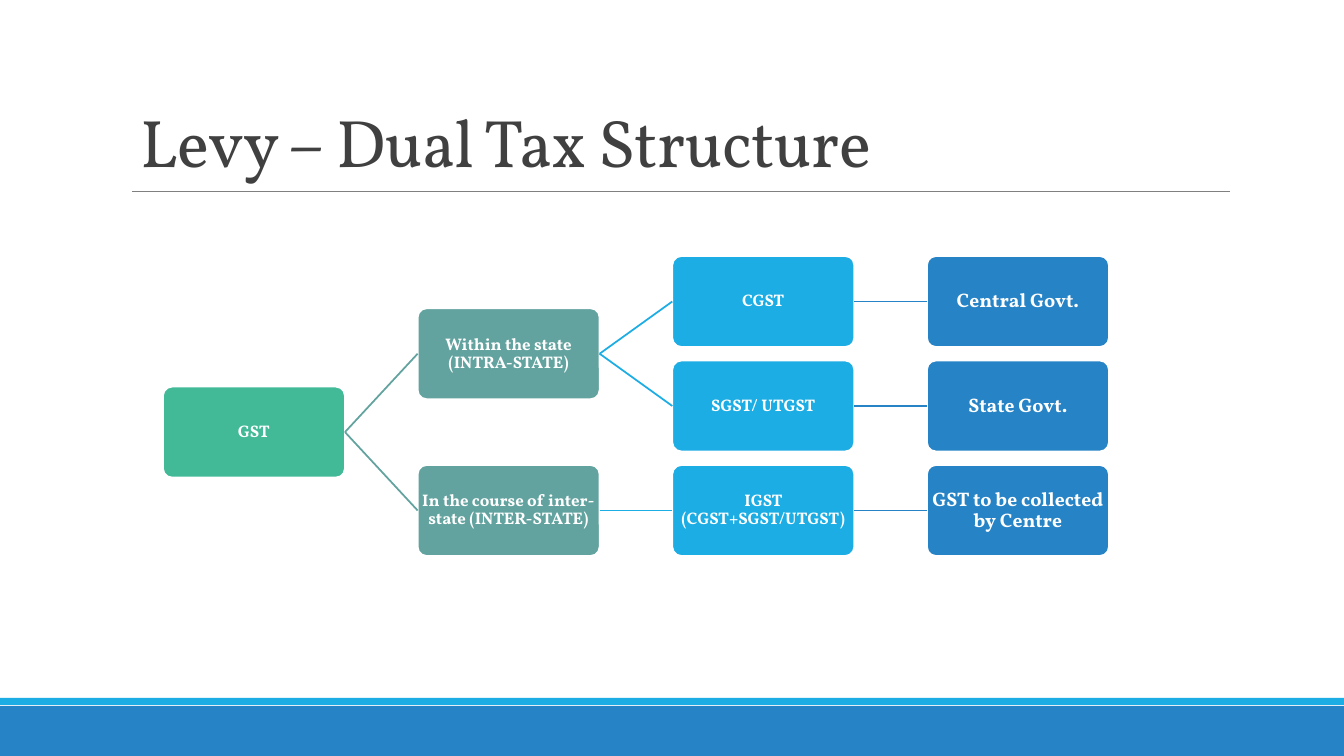
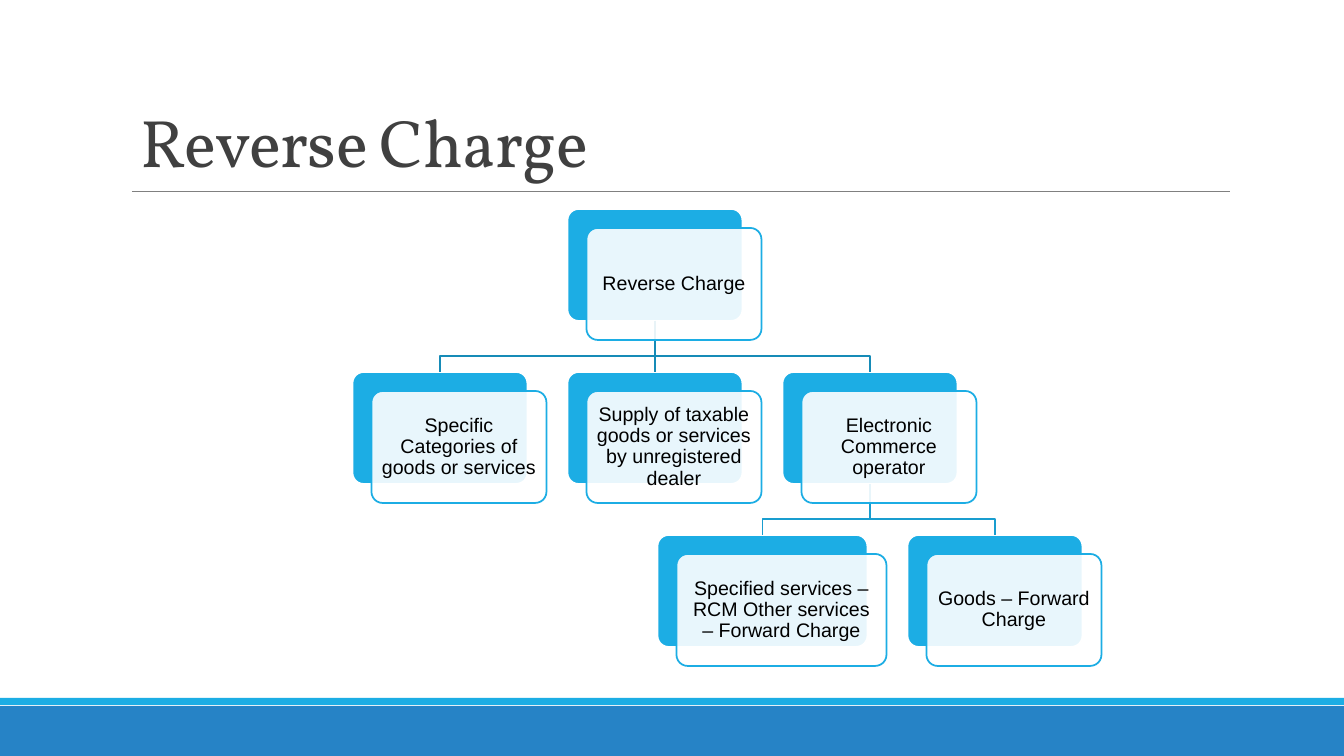
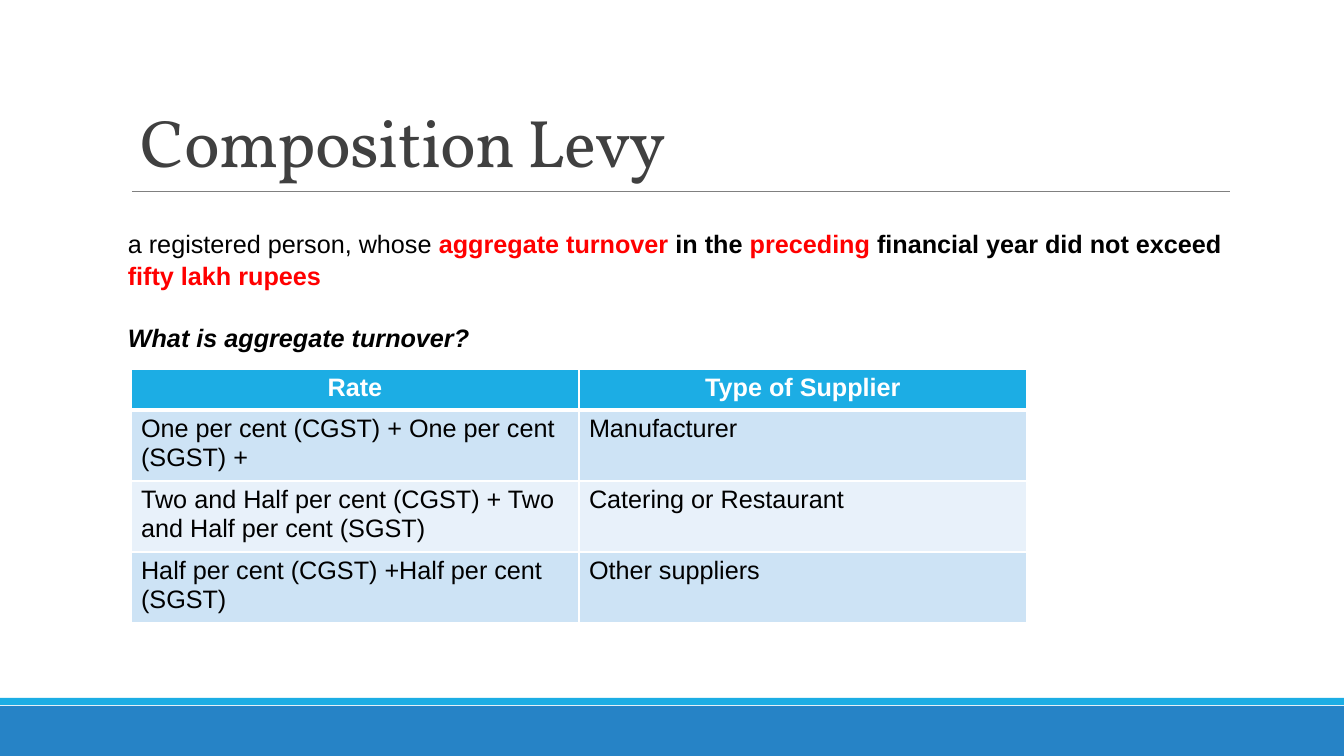
from collections import namedtuple
from itertools import count

from lxml import etree
from pptx import Presentation
from pptx.dml.color import RGBColor
from pptx.enum.shapes import MSO_CONNECTOR, MSO_SHAPE
from pptx.enum.text import MSO_ANCHOR, PP_ALIGN
from pptx.oxml.ns import qn
from pptx.util import Emu, Pt

RECTANGLE = MSO_SHAPE.RECTANGLE
ROUNDED = MSO_SHAPE.ROUNDED_RECTANGLE
STRAIGHT = MSO_CONNECTOR.STRAIGHT
CENTER = PP_ALIGN.CENTER
LEFT = PP_ALIGN.LEFT
MIDDLE = MSO_ANCHOR.MIDDLE
BOTTOM = MSO_ANCHOR.BOTTOM
TOP_SIDE, LEFT_SIDE, BOTTOM_SIDE, RIGHT_SIDE = range(4)

EMU_PER_PX = 914400 / 100.8
SLIDE_WIDTH, SLIDE_HEIGHT = 1344, 756
HEADING_FONT, BODY_FONT = "Vollkorn", "Arial"
COLOURS = {
    "white": "FFFFFF", "black": "000000", "red": "FF0000",
    "title": "404040", "rule": "808080",
    "sky": "1CADE4", "blue": "2683C6", "green": "42BA97", "teal": "62A39F",
    "upper link": "168BB7", "lower link": "199DCF",
    "band dark": "CDE3F5", "band light": "E8F1FA",
}

Node = namedtuple("Node", "text children", defaults=((),))
Card = namedtuple("Card", "text children width", defaults=((), 175))

TAX_TREE = Node("GST", (
    Node("Within the state (INTRA-STATE)", (
        Node("CGST", (Node("Central Govt."),)),
        Node("SGST/ UTGST", (Node("State Govt."),)),
    )),
    Node("In the course of inter-state (INTER-STATE)", (
        Node("IGST (CGST+SGST/UTGST)", (Node("GST to be collected by Centre"),)),
    )),
))
TAX_LEVELS = (("green", 12), ("teal", 12), ("sky", 12), ("blue", 14))

CHARGE_TREE = Card("Reverse Charge", (
    Card("Specific Categories of goods or services"),
    Card("Supply of taxable goods or services by unregistered dealer"),
    Card("Electronic Commerce operator", (
        Card("Specified services – RCM Other services – Forward Charge", width=210),
        Card("Goods – Forward Charge"),
    )),
))
CHARGE_LINKS = ("upper link", "lower link")

ELIGIBILITY = (
    ("a registered person, whose ", "black", False),
    ("aggregate turnover ", "red", True),
    ("in the ", "black", True),
    ("preceding", "red", True),
    (" financial year did not exceed ", "black", True),
    ("fifty lakh rupees", "red", True),
)
RATES = (
    ("Rate", "Type of Supplier"),
    ("One per cent (CGST) + One per cent (SGST) +", "Manufacturer"),
    ("Two and Half per cent (CGST) + Two and Half per cent (SGST)",
     "Catering or Restaurant"),
    ("Half per cent (CGST) +Half per cent (SGST)", "Other suppliers"),
)


def px(length):
    return Emu(round(length * EMU_PER_PX))


def colour(name):
    return RGBColor.from_string(COLOURS[name])


def add_run(paragraph, text, size, colour_name, font=BODY_FONT, bold=False, italic=False):
    run = paragraph.add_run()
    run.text = text
    run.font.name = font
    run.font.size = Pt(size)
    run.font.bold = bold
    run.font.italic = italic
    run.font.color.rgb = colour(colour_name)
    return run


def add_box(slide, kind, box, fill, line=None):
    shape = slide.shapes.add_shape(kind, *map(px, box))
    shape.shadow.inherit = False
    shape.fill.solid()
    shape.fill.fore_color.rgb = colour(fill)
    if line:
        shape.line.color.rgb = colour(line)
        shape.line.width = Pt(1.25)
    else:
        shape.line.fill.background()
    if kind == ROUNDED:
        shape.adjustments[0] = 0.1
    return shape


def add_label(shape, text, inset, **style):
    frame = shape.text_frame
    frame.word_wrap = True
    frame.vertical_anchor = MIDDLE
    frame.margin_left = frame.margin_right = px(inset)
    frame.margin_top = frame.margin_bottom = px(inset)
    paragraph = frame.paragraphs[0]
    paragraph.alignment = CENTER
    paragraph.line_spacing = 0.9
    add_run(paragraph, text, **style)


def add_line(slide, colour_name, width, start=(0, 0), end=(0, 0)):
    connector = slide.shapes.add_connector(STRAIGHT, *map(px, start + end))
    connector.line.color.rgb = colour(colour_name)
    connector.line.width = Pt(width)
    etree.SubElement(connector._element.spPr, qn("a:effectLst"))
    return connector


def join(slide, first, first_side, second, second_side, colour_name):
    connector = add_line(slide, colour_name, 1.25)
    connector.begin_connect(first, first_side)
    connector.end_connect(second, second_side)


def add_text_box(slide, box):
    frame = slide.shapes.add_textbox(*map(px, box)).text_frame
    frame.word_wrap = True
    return frame


def add_titled_slide(presentation, title):
    slide = presentation.slides.add_slide(presentation.slide_layouts[6])
    add_box(slide, RECTANGLE, (0, 706, SLIDE_WIDTH, 50), "blue")
    add_box(slide, RECTANGLE, (0, 698, SLIDE_WIDTH, 7), "sky")
    add_line(slide, "rule", 0.5, (132, 191), (1230, 191))
    frame = add_text_box(slide, (131, 26, 1109, 160))
    frame.vertical_anchor = BOTTOM
    paragraph = frame.paragraphs[0]
    paragraph.line_spacing = 0.85
    run = add_run(paragraph, title, 48, "title", HEADING_FONT)
    run.font._element.set("spc", "-50")
    return slide


def add_tax_tree(slide, root, box):
    left, top, width, height = box
    node_width, node_height = 182, 91
    column_step = (width - node_width) / (len(TAX_LEVELS) - 1)
    row_step = (height - node_height) / 2
    leaf_rows = count()

    def place(node, level):
        placed = [place(child, level + 1) for child in node.children]
        rows = [row for _, row in placed] or [next(leaf_rows)]
        row = sum(rows) / len(rows)
        fill, size = TAX_LEVELS[level]
        corner = (left + level * column_step, top + row * row_step)
        shape = add_box(slide, ROUNDED, corner + (node_width, node_height), fill, "white")
        add_label(shape, node.text, 1, size=size, colour_name="white",
                  font=HEADING_FONT, bold=True)
        for child, _ in placed:
            join(slide, shape, RIGHT_SIDE, child, LEFT_SIDE, TAX_LEVELS[level + 1][0])
        return shape, row

    place(root, 0)


def add_elbow(slide, start, bend_y, end, colour_name):
    points = [start, (start[0], bend_y), (end[0], bend_y), end]
    points = [(px(x), px(y)) for x, y in points]
    builder = slide.shapes.build_freeform(*points[0])
    builder.add_line_segments(points[1:], close=False)
    elbow = builder.convert_to_shape()
    elbow.shadow.inherit = False
    elbow.fill.background()
    elbow.line.color.rgb = colour(colour_name)
    elbow.line.width = Pt(1.25)


def add_charge_tree(slide, root, center, top):
    card_height, offset = 112, 19
    column_gap, level_gap, bend = 40, 51, 35
    backs, links = [], []

    def place(card, middle, y, level):
        box = (middle - card.width / 2, y, card.width, card_height)
        back = add_box(slide, ROUNDED, box, "sky", "white")
        backs.append((card, box))
        row_width = sum(child.width + column_gap for child in card.children) - column_gap
        x = middle - row_width / 2
        for child in card.children:
            child_middle = x + child.width / 2
            child_y = y + card_height + level_gap
            child_back = place(child, child_middle, child_y, level + 1)
            links.append((back, (middle, y + card_height),
                          child_back, (child_middle, child_y), CHARGE_LINKS[level]))
            x += child.width + column_gap
        return back

    place(root, center, top, 0)
    for back, start, child_back, end, link_colour in links:
        if start[0] == end[0]:
            join(slide, back, BOTTOM_SIDE, child_back, TOP_SIDE, link_colour)
        else:
            add_elbow(slide, start, start[1] + bend, end, link_colour)
    for card, (x, y, width, height) in backs:
        front = add_box(slide, ROUNDED, (x + offset, y + offset, width, height),
                        "white", "sky")
        fill_colour = front._element.spPr.find(qn("a:solidFill"))[0]
        etree.SubElement(fill_colour, qn("a:alpha"), val="90000")
        add_label(front, card.text, 6, size=14, colour_name="black")


def add_eligibility(slide, box):
    frame = add_text_box(slide, box)
    statement = frame.paragraphs[0]
    for text, colour_name, bold in ELIGIBILITY:
        add_run(statement, text, 18, colour_name, bold=bold)
    question = frame.add_paragraph()
    question.space_before = Pt(22)
    add_run(question, "What is aggregate turnover?", 18, "black", bold=True, italic=True)
    for paragraph in frame.paragraphs:
        paragraph.line_spacing = 1.05


def set_borders(cell, bottom_width):
    properties = cell._tc.get_or_add_tcPr()
    sides = (("lnL", 1), ("lnR", 1), ("lnT", 1), ("lnB", bottom_width))
    for position, (side, width) in enumerate(sides):
        line = etree.Element(qn("a:" + side), w=str(Pt(width)))
        fill = etree.SubElement(line, qn("a:solidFill"))
        etree.SubElement(fill, qn("a:srgbClr"), val=COLOURS["white"])
        properties.insert(position, line)


def add_rate_table(slide, box):
    header_height, row_height = 41, 71
    table = slide.shapes.add_table(len(RATES), len(RATES[0]), *map(px, box)).table
    table.horz_banding = False
    for row_index, texts in enumerate(RATES):
        header = row_index == 0
        fill = "sky" if header else ("band light", "band dark")[row_index % 2]
        table.rows[row_index].height = px(header_height if header else row_height)
        for column_index, text in enumerate(texts):
            cell = table.cell(row_index, column_index)
            cell.fill.solid()
            cell.fill.fore_color.rgb = colour(fill)
            set_borders(cell, 3 if header else 1)
            paragraph = cell.text_frame.paragraphs[0]
            paragraph.alignment = CENTER if header else LEFT
            add_run(paragraph, text, 18, "white" if header else "black", bold=header)


def main():
    presentation = Presentation()
    presentation.slide_width = px(SLIDE_WIDTH)
    presentation.slide_height = px(SLIDE_HEIGHT)

    slide = add_titled_slide(presentation, "Levy – Dual Tax Structure")
    add_tax_tree(slide, TAX_TREE, (163, 256, 946, 300))

    slide = add_titled_slide(presentation, "Reverse Charge")
    add_charge_tree(slide, CHARGE_TREE, 655, 209)

    slide = add_titled_slide(presentation, "Composition Levy")
    add_eligibility(slide, (118, 222, 1148, 132))
    add_rate_table(slide, (131, 369, 896, 254))

    presentation.save("out.pptx")


if __name__ == "__main__":
    main()
